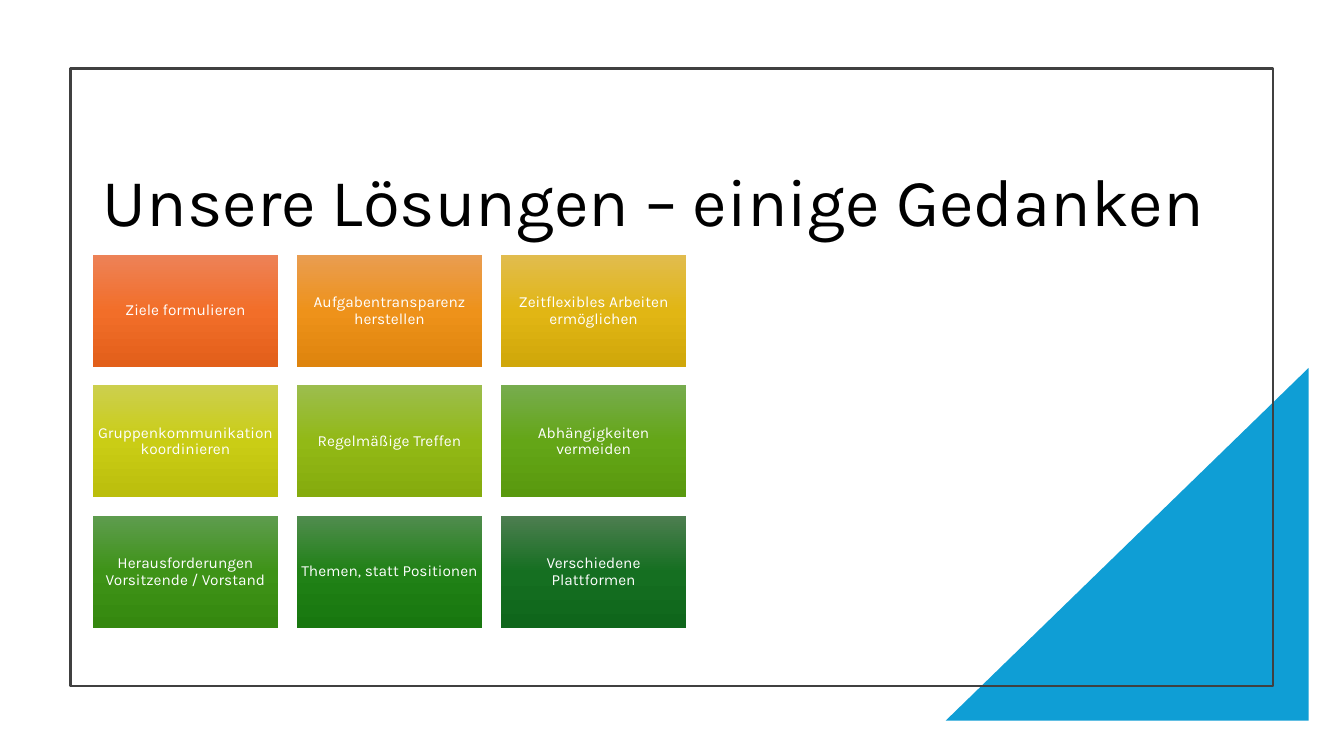
"""Build the slide "Unsere Lösungen – einige Gedanken" with a grid of nine ideas."""
from copy import deepcopy
from dataclasses import dataclass

from pptx import Presentation
from pptx.dml.color import RGBColor
from pptx.enum.shapes import MSO_SHAPE
from pptx.enum.text import MSO_ANCHOR, MSO_AUTO_SIZE, PP_ALIGN
from pptx.util import Inches, Pt


@dataclass(frozen=True)
class Theme:
    font: str = "Karla"
    title_size: int = 48
    tile_size: int = 11
    title_color: str = "000000"
    tile_text: str = "FFFFFF"
    accent: str = "0F9ED5"
    frame: str = "404040"


IDEAS = [
    ("Ziele formulieren", ("ED8257", "F26E29", "E25F1A")),
    ("Aufgabentransparenz herstellen", ("E99D51", "EE921A", "DE840D")),
    ("Zeitflexibles Arbeiten ermöglichen", ("E1BC4E", "E1B614", "D0A70A")),
    ("Gruppenkommunikation koordinieren", ("CCCF4E", "CACD15", "BBBE0C")),
    ("Regelmäßige Treffen", ("9CBD4E", "92B916", "85AB0D")),
    ("Abhängigkeiten vermeiden", ("77AC4E", "64A617", "59990E")),
    ("Herausforderungen Vorsitzende / Vorstand", ("5E9C4E", "3E9317", "35880F")),
    ("Themen, statt Positionen", ("508C4E", "208116", "18770F")),
    ("Verschiedene Plattformen", ("4D7E50", "156F21", "0F661B")),
]
COLUMNS = 3
GRID_LEFT, GRID_TOP = 0.92, 2.53
TILE_WIDTH, TILE_HEIGHT = 1.84, 1.11
GAP = 0.1 * TILE_WIDTH


def write(frame, text, *, font, size, color, align, inset=None):
    frame.word_wrap = True
    frame.auto_size = MSO_AUTO_SIZE.NONE
    frame.vertical_anchor = MSO_ANCHOR.MIDDLE
    if inset is not None:
        frame.margin_left = frame.margin_right = Inches(inset)
        frame.margin_top = frame.margin_bottom = Inches(inset)
    paragraph = frame.paragraphs[0]
    paragraph.alignment = align
    paragraph.line_spacing = 0.9
    run = paragraph.add_run()
    run.text = text
    run.font.name = font
    run.font.size = Pt(size)
    run.font.color.rgb = RGBColor.from_string(color)


class SlideBuilder:
    def __init__(self, slide, theme):
        self.slide = slide
        self.theme = theme

    def title(self, text, left, top, width, height):
        heading = self.slide.shapes.title
        heading.left, heading.top = Inches(left), Inches(top)
        heading.width, heading.height = Inches(width), Inches(height)
        write(heading.text_frame, text, font=self.theme.font,
              size=self.theme.title_size, color=self.theme.title_color,
              align=PP_ALIGN.LEFT)

    def shape(self, preset, left, top, width, height, fill=None, line=None):
        shape = self.slide.shapes.add_shape(
            preset, Inches(left), Inches(top), Inches(width), Inches(height))
        shape.shadow.inherit = False
        if fill:
            shape.fill.solid()
            shape.fill.fore_color.rgb = RGBColor.from_string(fill)
        else:
            shape.fill.background()
        if line:
            shape.line.color.rgb = RGBColor.from_string(line)
            shape.line.width = Pt(1.5)
        else:
            shape.line.fill.background()
        return shape

    def corner(self, left, top, width, height):
        triangle = self.shape(MSO_SHAPE.RIGHT_TRIANGLE, left, top, width, height,
                              fill=self.theme.accent)
        triangle._element.spPr.xfrm.set("flipH", "1")

    def border(self, left, top, width, height):
        self.shape(MSO_SHAPE.RECTANGLE, left, top, width, height,
                   line=self.theme.frame)

    def tile(self, text, shades, left, top):
        tile = self.shape(MSO_SHAPE.RECTANGLE, left, top, TILE_WIDTH, TILE_HEIGHT)
        tile.fill.gradient()
        tile.fill.gradient_angle = 270
        first_stop = tile._element.spPr.xpath("a:gradFill/a:gsLst/a:gs")[0]
        first_stop.addnext(deepcopy(first_stop))
        for stop, shade, position in zip(tile.fill.gradient_stops, shades, (0, 0.5, 1)):
            stop.color.rgb = RGBColor.from_string(shade)
            stop.position = position
        write(tile.text_frame, text, font=self.theme.font,
              size=self.theme.tile_size, color=self.theme.tile_text,
              align=PP_ALIGN.CENTER, inset=0.04)


def main():
    deck = Presentation()
    deck.slide_width, deck.slide_height = Inches(13.33), Inches(7.5)
    builder = SlideBuilder(deck.slides.add_slide(deck.slide_layouts[5]), Theme())
    builder.corner(9.38, 3.65, 3.6, 3.5)
    builder.border(0.7, 0.68, 11.93, 6.13)
    builder.title("Unsere Lösungen – einige Gedanken", 0.92, 1.15, 11.93, 1.77)
    for index, (idea, shades) in enumerate(IDEAS):
        row, column = divmod(index, COLUMNS)
        builder.tile(idea, shades,
                     GRID_LEFT + column * (TILE_WIDTH + GAP),
                     GRID_TOP + row * (TILE_HEIGHT + GAP))
    deck.save("out.pptx")


if __name__ == "__main__":
    main()
